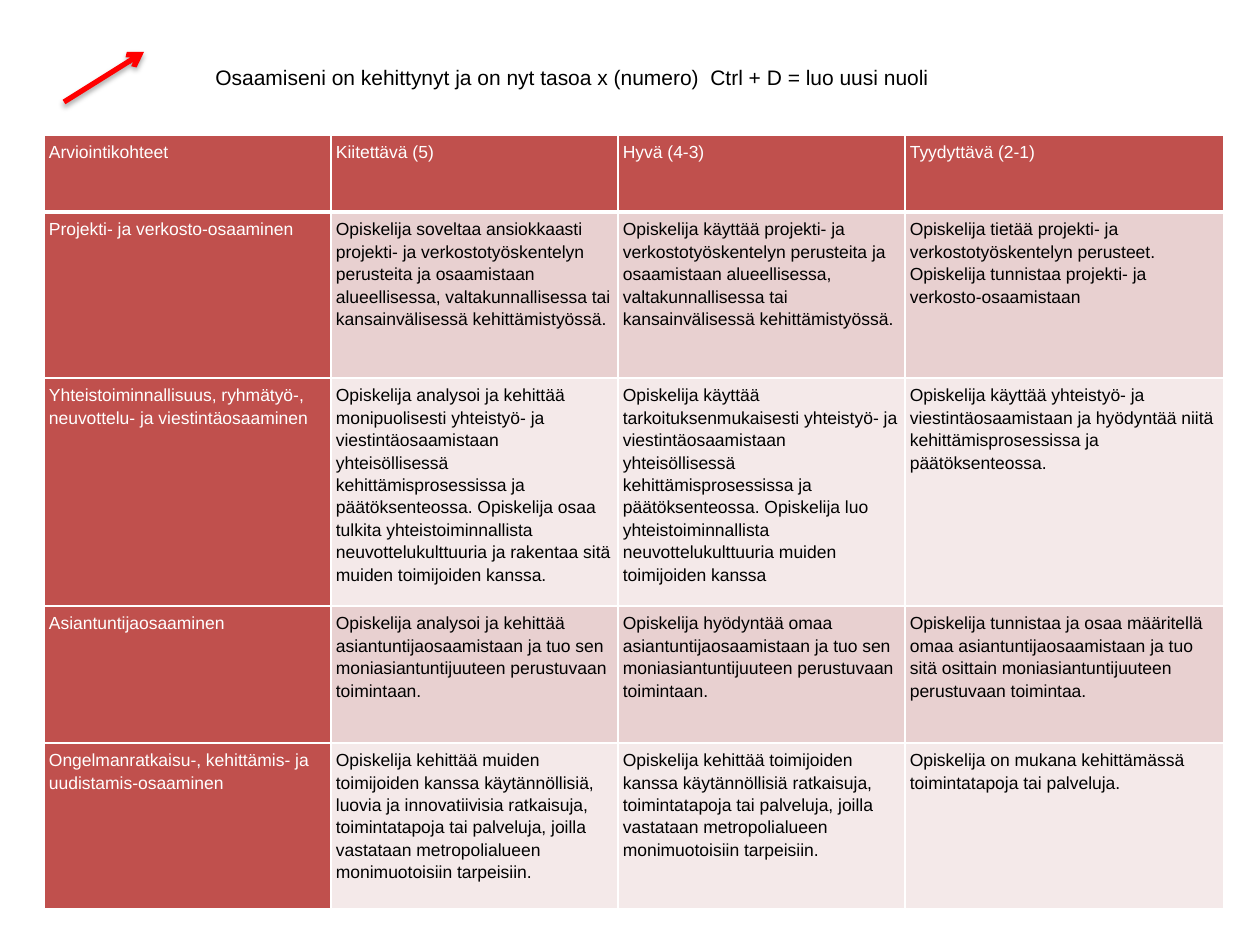
from dataclasses import dataclass

from lxml.etree import SubElement
from pptx import Presentation
from pptx.dml.color import RGBColor as Rgb
from pptx.enum.shapes import MSO_CONNECTOR as Connector
from pptx.oxml import parse_xml
from pptx.oxml.ns import nsdecls, qn
from pptx.util import Emu, Pt

EMU_PER_PX = 914400 / 126


@dataclass(frozen=True)
class Theme:
    font: str = "Arial"
    caption_size: int = 12
    cell_size: int = 10
    dark_text: str = "000000"
    light_text: str = "FFFFFF"
    heading_fill: str = "C0504D"
    bands: tuple = ("E8D0D0", "F4E9E9")
    border: str = "FFFFFF"
    arrow: str = "FF0000"
    shadow: str = "000000"


THEME = Theme()

COLUMN_WIDTHS = (287, 287, 287, 319)
ROW_HEIGHTS = (77, 166, 228, 137, 166)
CRITERIA = (
    ("Arviointikohteet", "Kiitettävä (5)", "Hyvä (4-3)", "Tyydyttävä (2-1)"),
    (
        "Projekti- ja verkosto-osaaminen",
        "Opiskelija soveltaa ansiokkaasti projekti- ja verkostotyöskentelyn perusteita ja "
        "osaamistaan alueellisessa, valtakunnallisessa tai kansainvälisessä kehittämistyössä.",
        "Opiskelija käyttää projekti- ja verkostotyöskentelyn perusteita ja osaamistaan "
        "alueellisessa, valtakunnallisessa tai kansainvälisessä kehittämistyössä.",
        "Opiskelija tietää projekti- ja verkostotyöskentelyn perusteet. "
        "Opiskelija tunnistaa projekti- ja verkosto-osaamistaan",
    ),
    (
        "Yhteistoiminnallisuus, ryhmätyö-, neuvottelu- ja viestintäosaaminen",
        "Opiskelija analysoi ja kehittää monipuolisesti yhteistyö- ja viestintäosaamistaan "
        "yhteisöllisessä kehittämisprosessissa ja päätöksenteossa. Opiskelija osaa tulkita "
        "yhteistoiminnallista neuvottelukulttuuria ja rakentaa sitä muiden toimijoiden kanssa.",
        "Opiskelija käyttää tarkoituksenmukaisesti yhteistyö- ja viestintäosaamistaan "
        "yhteisöllisessä kehittämisprosessissa ja päätöksenteossa. Opiskelija luo "
        "yhteistoiminnallista neuvottelukulttuuria muiden toimijoiden kanssa",
        "Opiskelija käyttää yhteistyö- ja viestintäosaamistaan ja hyödyntää "
        "niitä kehittämisprosessissa ja päätöksenteossa.",
    ),
    (
        "Asiantuntijaosaaminen",
        "Opiskelija analysoi ja kehittää asiantuntijaosaamistaan ja tuo sen "
        "moniasiantuntijuuteen perustuvaan toimintaan.",
        "Opiskelija hyödyntää omaa asiantuntijaosaamistaan ja tuo sen "
        "moniasiantuntijuuteen perustuvaan toimintaan.",
        "Opiskelija tunnistaa ja osaa määritellä omaa asiantuntijaosaamistaan ja tuo sitä "
        "osittain moniasiantuntijuuteen perustuvaan toimintaa.",
    ),
    (
        "Ongelmanratkaisu-, kehittämis- ja uudistamis-osaaminen",
        "Opiskelija kehittää muiden toimijoiden kanssa käytännöllisiä, luovia ja innovatiivisia "
        "ratkaisuja, toimintatapoja tai palveluja, joilla vastataan metropolialueen "
        "monimuotoisiin tarpeisiin.",
        "Opiskelija kehittää toimijoiden kanssa käytännöllisiä ratkaisuja, toimintatapoja tai "
        "palveluja, joilla vastataan metropolialueen monimuotoisiin tarpeisiin.",
        "Opiskelija on mukana kehittämässä toimintatapoja tai palveluja.",
    ),
)


def px(length):
    return Emu(round(length * EMU_PER_PX))


def add_span(para, text, size, color):
    span = para.add_run()
    span.text = text
    span.font.name = THEME.font
    span.font.size = Pt(size)
    span.font.bold = False
    span.font.color.rgb = Rgb.from_string(color)


def set_borders(cell, bottom_width):
    """Draw the four cell borders; they must precede the fill in the XML."""
    properties = cell._tc.get_or_add_tcPr()
    widths = {"lnL": 1, "lnR": 1, "lnT": 1, "lnB": bottom_width}
    for index, (side, width) in enumerate(widths.items()):
        properties.insert(index, parse_xml(
            f'<a:{side} {nsdecls("a")} w="{Pt(width)}"><a:solidFill>'
            f'<a:srgbClr val="{THEME.border}"/></a:solidFill></a:{side}>'))


def fill_cell(cell, text, row, column):
    is_heading = row == 0 or column == 0
    fill = THEME.heading_fill if is_heading else THEME.bands[(row - 1) % 2]
    cell.fill.solid()
    cell.fill.fore_color.rgb = Rgb.from_string(fill)
    set_borders(cell, bottom_width=3 if row == 0 else 1)
    cell.margin_left = cell.margin_right = cell.margin_top = cell.margin_bottom = px(5)
    para = cell.text_frame.paragraphs[0]
    para.line_spacing = 1.15
    para.space_before = para.space_after = Pt(3.8)
    add_span(para, text, THEME.cell_size,
             THEME.light_text if is_heading else THEME.dark_text)


def add_criteria_table(page, left, top):
    table = page.shapes.add_table(
        len(ROW_HEIGHTS), len(COLUMN_WIDTHS), px(left), px(top),
        px(sum(COLUMN_WIDTHS)), px(sum(ROW_HEIGHTS))).table
    for column, width in zip(table.columns, COLUMN_WIDTHS):
        column.width = px(width)
    for row, height in zip(table.rows, ROW_HEIGHTS):
        row.height = px(height)
    for row, texts in enumerate(CRITERIA):
        for column, text in enumerate(texts):
            fill_cell(table.cell(row, column), text, row, column)


def add_progress_arrow(page, start, end):
    """Add an arrow with a soft shadow falling straight down."""
    arrow = page.shapes.add_connector(Connector.STRAIGHT, *map(px, start + end))
    arrow.line.color.rgb = Rgb.from_string(THEME.arrow)
    arrow.line.width = Pt(3)
    SubElement(arrow.line._get_or_add_ln(), qn("a:tailEnd"), type="arrow")
    arrow._element.spPr.append(parse_xml(
        f'<a:effectLst {nsdecls("a")}><a:outerShdw blurRad="{Pt(3.1)}" dist="{Pt(1.8)}" '
        f'dir="5400000" rotWithShape="0"><a:srgbClr val="{THEME.shadow}">'
        '<a:alpha val="35000"/></a:srgbClr></a:outerShdw></a:effectLst>'))


def add_caption(page, text, left, top, width, height):
    box = page.shapes.add_textbox(px(left), px(top), px(width), px(height))
    box.text_frame.word_wrap = False
    add_span(box.text_frame.paragraphs[0], text, THEME.caption_size, THEME.dark_text)


def main():
    deck = Presentation()
    deck.slide_width, deck.slide_height = px(1260), px(945)
    page = deck.slides.add_slide(deck.slide_layouts[6])
    add_criteria_table(page, 44, 135)
    add_progress_arrow(page, (64, 102), (144, 52))
    add_caption(page, "Osaamiseni on kehittynyt ja on nyt tasoa x (numero)  "
                "Ctrl + D = luo uusi nuoli", 203, 58, 746, 38)
    deck.save("out.pptx")


if __name__ == "__main__":
    main()
